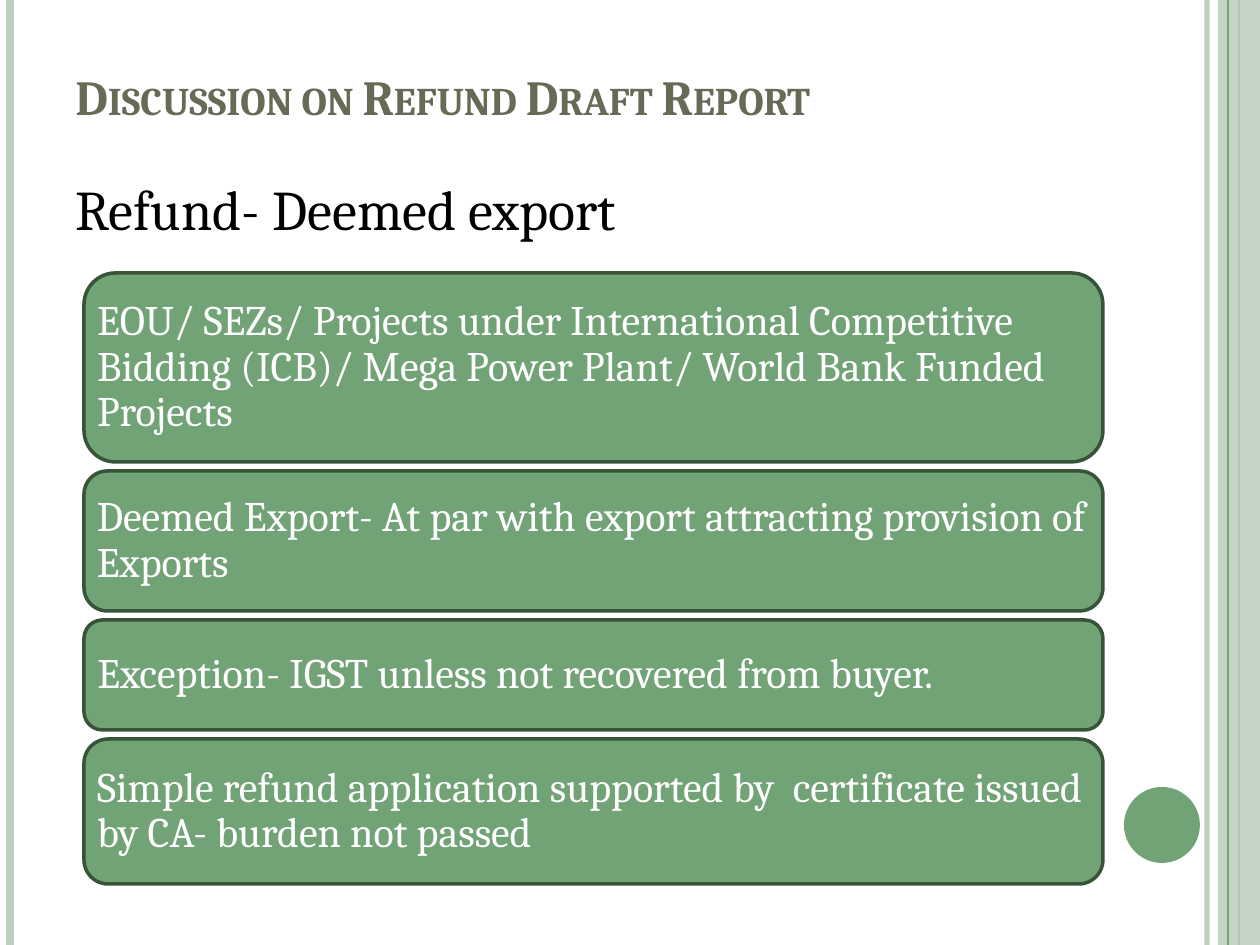
import pptx
import pptx.util
import pptx.dml.color
import pptx.enum.shapes
import pptx.enum.text
import pptx.oxml
import pptx.oxml.ns
from pptx.enum.shapes import MSO_SHAPE

PX = 914400 // 126
WIDTH, HEIGHT = 1260, 945
FONT = "Cambria"
COLORS = {
    "green": "72A376",
    "pale": "BCCEBD",
    "outline": "375439",
    "title": "676A55",
    "black": "000000",
    "white": "FFFFFF",
}
NAMESPACE = pptx.oxml.ns.nsdecls("a")
TEXT_SHADOW = (
    f'<a:effectLst {NAMESPACE}><a:outerShdw blurRad="50000" dist="30000" dir="2700000" '
    'algn="tl"><a:srgbClr val="000000"><a:alpha val="30000"/></a:srgbClr>'
    "</a:outerShdw></a:effectLst>"
)


def px(length):
    return pptx.util.Emu(length * PX)


def rgb(name):
    return pptx.dml.color.RGBColor.from_string(COLORS[name])


def set_opacity(fill_parent, percent):
    color = fill_parent.find(".//" + pptx.oxml.ns.qn("a:srgbClr"))
    color.append(pptx.oxml.parse_xml(f'<a:alpha {NAMESPACE} val="{percent * 1000}"/>'))


class SlideBuilder:
    def __init__(self, slide):
        self.slide = slide

    def vertical_rule(self, x, color, points, opacity=100):
        line = self.slide.shapes.add_connector(
            pptx.enum.shapes.MSO_CONNECTOR.STRAIGHT, px(x), 0, px(x), px(HEIGHT)
        )
        line.line.color.rgb = rgb(color)
        line.line.width = pptx.util.Pt(points)
        properties = line._element.spPr
        if opacity < 100:
            set_opacity(properties, opacity)
        properties.append(pptx.oxml.parse_xml(f"<a:effectLst {NAMESPACE}/>"))

    def shape(self, kind, left, top, width, height, fill, opacity=100):
        shape = self.slide.shapes.add_shape(kind, px(left), px(top), px(width), px(height))
        shape.shadow.inherit = False
        shape.fill.solid()
        shape.fill.fore_color.rgb = rgb(fill)
        if opacity < 100:
            set_opacity(shape._element.spPr, opacity)
        shape.line.fill.background()
        return shape

    def set_text(self, shape, text, size, color, anchor):
        frame = shape.text_frame
        frame.word_wrap = True
        frame.vertical_anchor = anchor
        paragraph = frame.paragraphs[0]
        paragraph.text = text
        paragraph.alignment = pptx.enum.text.PP_ALIGN.LEFT
        paragraph.font.name = FONT
        paragraph.font.size = pptx.util.Pt(size)
        paragraph.font.color.rgb = rgb(color)
        return paragraph

    def heading(self, top, height, text, size, color, anchor, small_caps=False):
        """Add a text box whose letters cast a soft shadow."""
        box = self.slide.shapes.add_textbox(px(63), px(top), px(1029), px(height))
        paragraph = self.set_text(box, text, size, color, anchor)
        run = paragraph.runs[0]
        if small_caps:
            run.font.bold = True
            run.font._element.set("cap", "small")
        run.font._element.append(pptx.oxml.parse_xml(TEXT_SHADOW))

    def card(self, top, height, text):
        """Add a rounded card; insets offset the corner so all text lines up."""
        card = self.shape(MSO_SHAPE.ROUNDED_RECTANGLE, 84, top, 1019, height, "green")
        card.line.color.rgb = rgb("outline")
        card.line.width = pptx.util.Pt(2)
        corner_inset = round(0.29 * height / 6)
        frame = card.text_frame
        frame.margin_left = frame.margin_right = px(13 - corner_inset)
        frame.margin_top = frame.margin_bottom = 0
        paragraph = self.set_text(card, text, 24, "white", pptx.enum.text.MSO_ANCHOR.MIDDLE)
        paragraph.line_spacing = 0.9


def main():
    presentation = pptx.Presentation()
    presentation.slide_width, presentation.slide_height = px(WIDTH), px(HEIGHT)
    builder = SlideBuilder(presentation.slides.add_slide(presentation.slide_layouts[6]))

    builder.vertical_rule(1207, "pale", 3, opacity=93)
    builder.vertical_rule(10, "pale", 4.5)
    builder.vertical_rule(1239, "green", 1.5)
    builder.shape(MSO_SHAPE.RECTANGLE, 1218, 0, 42, HEIGHT, "pale", opacity=87)
    builder.vertical_rule(1228, "green", 0.75)
    builder.shape(MSO_SHAPE.OVAL, 1124, 787, 76, 76, "green")

    anchors = pptx.enum.text.MSO_ANCHOR
    builder.heading(53, 79, "Discussion on Refund Draft Report", 28, "title",
                    anchors.BOTTOM, small_caps=True)
    builder.heading(168, 80, "Refund- Deemed export", 32, "black", anchors.TOP)

    cards = [
        (189, "EOU/ SEZs/ Projects under International Competitive Bidding (ICB)/ "
              "Mega Power Plant/ World Bank Funded Projects"),
        (140, "Deemed Export- At par with export attracting provision of Exports"),
        (110, "Exception- IGST unless not recovered from buyer."),
        (145, "Simple refund application supported by  certificate issued by CA- "
              "burden not passed"),
    ]
    top, gap = 273, 9
    for height, text in cards:
        builder.card(top, height, text)
        top += height + gap

    presentation.save("out.pptx")


if __name__ == "__main__":
    main()
